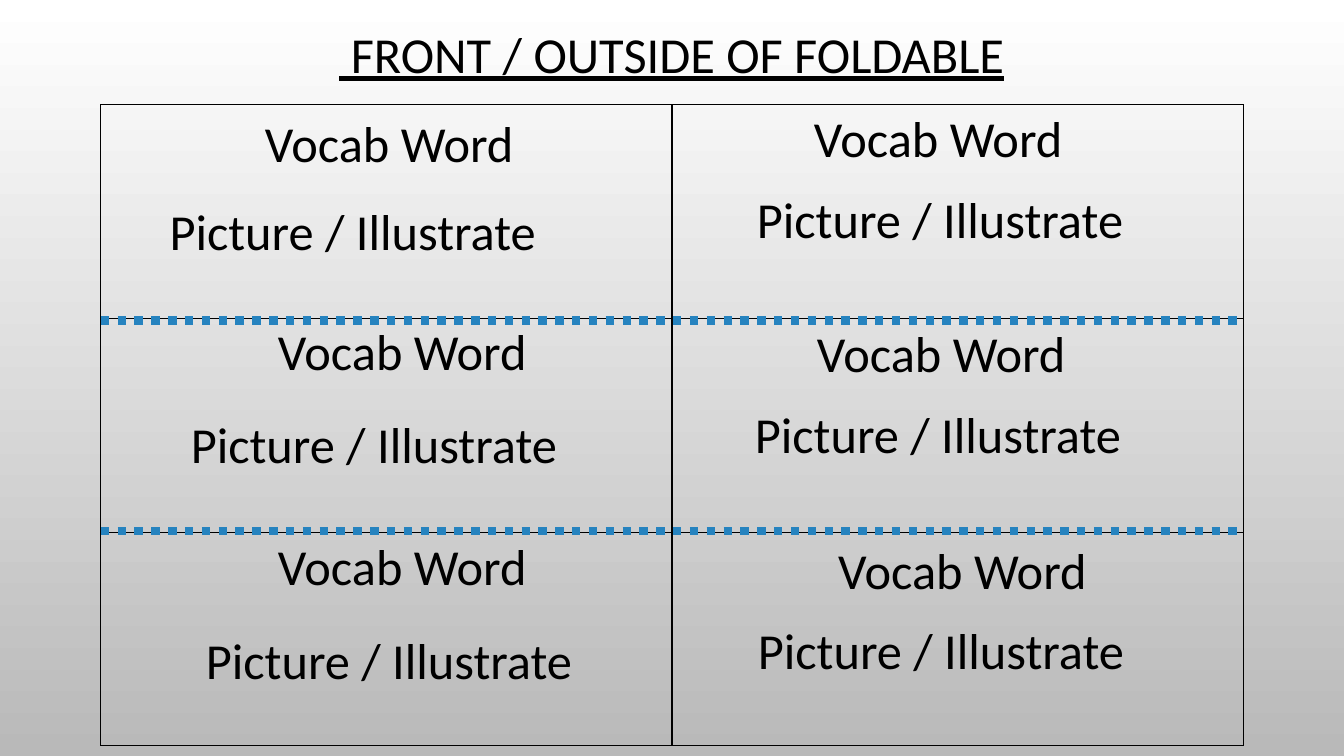
from lxml import etree
from pptx import Presentation
from pptx import util as u
from pptx.dml.color import RGBColor
from pptx.enum import dml, shapes, text
from pptx.oxml import ns

BLACK, BLUE = "000000", "2683BF"
COLUMNS, ROWS = 2, 3
FOLD_HEIGHTS = (2.14, 4.23)
FLAPS = (
    (((1.47, 0.02), (0.18, 0.9)), ((1.25, -0.03), (0.34, 0.78))),
    (((1.6, -0.03), (0.39, 0.89)), ((1.28, -0.01), (0.32, 0.79))),
    (((1.6, -0.02), (0.54, 0.91)), ((1.49, 0.02), (0.35, 0.81))),
)


def color(value):
    """Turn a hex string into a colour."""
    return RGBColor.from_string(value)


def add_text(page, words, left, top, width, height, wrap=True, grow=True,
             anchor=text.MSO_ANCHOR.TOP, underline=None, spacing=None):
    """Place one centred line of large text."""
    box = page.shapes.add_textbox(*map(u.Inches, (left, top, width, height)))
    frame = box.text_frame
    frame.word_wrap = wrap
    frame.auto_size = text.MSO_AUTO_SIZE.SHAPE_TO_FIT_TEXT if grow else text.MSO_AUTO_SIZE.NONE
    frame.vertical_anchor = anchor
    para = frame.paragraphs[0]
    para.alignment = text.PP_ALIGN.CENTER
    para.line_spacing = spacing
    span = para.add_run()
    span.text = words
    span.font.name = "Calibri"
    span.font.size = u.Pt(36)
    span.font.underline = underline
    span.font.color.rgb = color(BLACK)


def paint_background(page):
    """Shade the page from white at the top to grey at the bottom."""
    fill = page.background.fill
    fill.gradient()
    fill.gradient_angle = 270
    for stop, shade in zip(fill.gradient_stops, ("FFFFFF", "B9B9B9")):
        stop.color.rgb = color(shade)


def outline_cell(cell):
    """Give a clear cell thin black borders."""
    properties = cell._tc.get_or_add_tcPr()
    for side in ("a:lnL", "a:lnR", "a:lnT", "a:lnB"):
        border = etree.SubElement(properties, ns.qn(side), w=str(u.Pt(1)))
        solid = etree.SubElement(border, ns.qn("a:solidFill"))
        etree.SubElement(solid, ns.qn("a:srgbClr"), val=BLACK)
    cell.fill.background()


def add_grid(page, left, top, width, height):
    """Draw the table that forms the sheet of flaps."""
    frame = page.shapes.add_table(ROWS, COLUMNS, *map(u.Inches, (left, top, width, height)))
    table = frame.table
    table.first_row = table.horz_banding = False
    for cell in table.iter_cells():
        outline_cell(cell)


def add_fold(page, left, top, width):
    """Draw one dotted fold line."""
    fold = page.shapes.add_connector(
        shapes.MSO_CONNECTOR.STRAIGHT,
        *map(u.Inches, (left, top, left + width, top)))
    fold.line.color.rgb = color(BLUE)
    fold.line.width = u.Pt(6)
    fold.line.dash_style = dml.MSO_LINE.ROUND_DOT
    etree.SubElement(fold._element.spPr, ns.qn("a:effectLst"))


def add_flap(page, left, top, word, picture):
    """Label one flap with its word and its picture."""
    add_text(page, "Vocab Word", left + word[0], top + word[1], 2.78, 0.71, wrap=False)
    add_text(page, "Picture / Illustrate", left + picture[0], top + picture[1], 4.64, 0.71)


def add_foldable(page, left, top, width, height):
    """Draw the grid, its folds and the labels of its flaps."""
    add_grid(page, left, top, width, height)
    for fold_height in FOLD_HEIGHTS:
        add_fold(page, left, top + fold_height, width)
    for row, flaps in enumerate(FLAPS):
        for column, (word, picture) in enumerate(flaps):
            add_flap(page, left + column * width / COLUMNS,
                     top + row * height / ROWS, word, picture)


def main():
    """Build and save the deck."""
    deck = Presentation()
    deck.slide_width, deck.slide_height = u.Inches(13.33), u.Inches(7.5)
    page = deck.slides.add_slide(deck.slide_layouts[6])
    paint_background(page)
    add_text(page, " FRONT / OUTSIDE OF FOLDABLE", 1, 0.1, 11.33, 0.93, grow=False,
             anchor=text.MSO_ANCHOR.MIDDLE, underline=True, spacing=0.9)
    add_foldable(page, 1, 1.04, 11.33, 6.36)
    deck.save("out.pptx")


if __name__ == "__main__":
    main()
